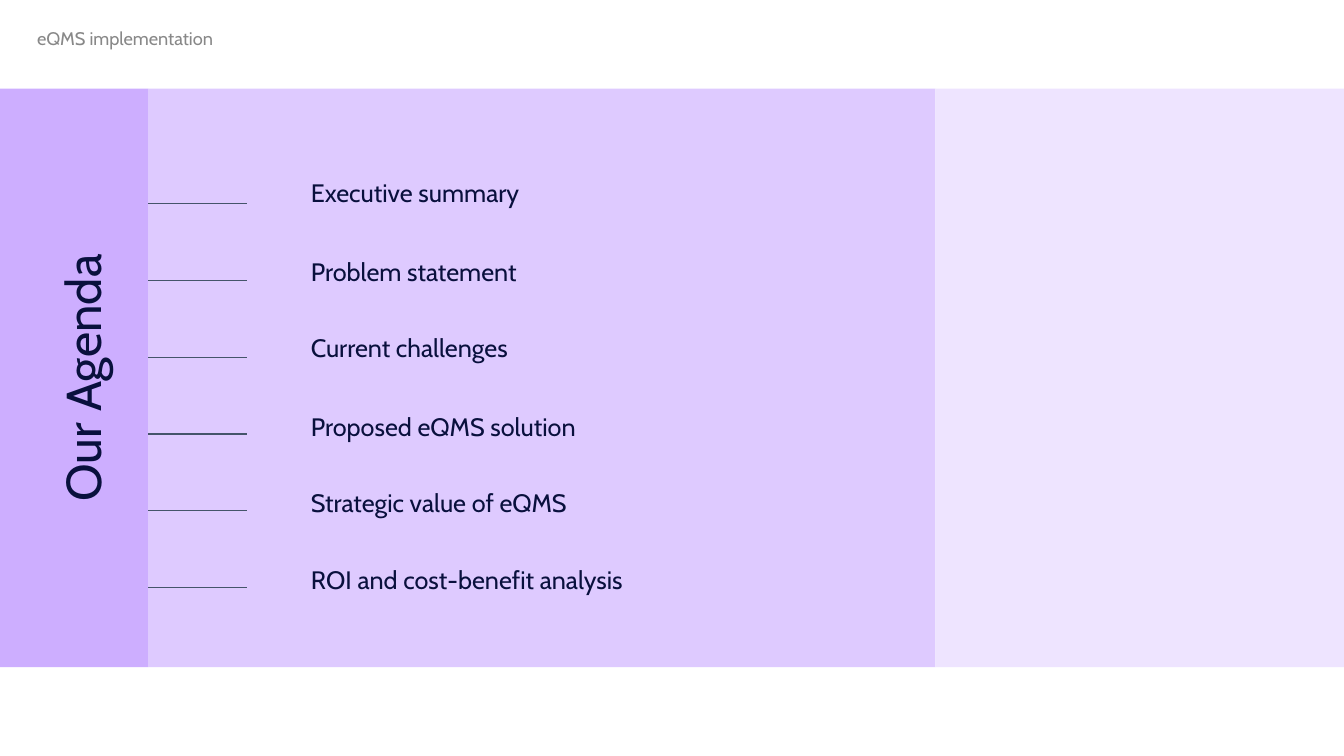
from dataclasses import dataclass
from typing import Any

from pptx import Presentation
from pptx import util as u
from pptx.dml.color import RGBColor
from pptx.enum import shapes, text
from pptx.oxml import parse_xml
from pptx.oxml.ns import nsdecls

Pt = u.Pt


@dataclass(frozen=True)
class Theme:
    font: str = "Cabin"
    ink: str = "09103D"
    muted: str = "888888"
    rule: str = "44546A"
    title_size: float = 35
    item_size: float = 18
    header_size: float = 13


@dataclass(frozen=True)
class Panel:
    left: float
    right: float
    color: str


@dataclass(frozen=True)
class AgendaItem:
    label: str
    top: float


THEME = Theme()
WIDTH, HEIGHT = 960, 540
BAND_TOP, BAND_HEIGHT = 63.36, 413.28
SIDEBAR_RIGHT, AGENDA_RIGHT = 105.84, 668.16
RULE_TOP, RULE_PITCH, RULE_LENGTH = 145.44, 54.86, 70.56
LABEL_LEFT, LABEL_WIDTH, LABEL_HEIGHT = 177.12, 452.16, 38.88
LABEL_INDENT = 36

PANELS = [
    Panel(0, SIDEBAR_RIGHT, "CDAEFF"),
    Panel(SIDEBAR_RIGHT, AGENDA_RIGHT, "DECAFF"),
    Panel(AGENDA_RIGHT, WIDTH, "EEE4FF"),
]
AGENDA = [
    AgendaItem("Executive summary", 118.08),
    AgendaItem("Problem statement", 174.24),
    AgendaItem("Current challenges", 228.96),
    AgendaItem("Proposed eQMS solution", 285.12),
    AgendaItem("Strategic value of eQMS", 339.12),
    AgendaItem("ROI and cost-benefit analysis", 394.56),
]


def write(box: Any, wording: str, *, size: float, color: str = THEME.ink,
          align: text.PP_ALIGN = text.PP_ALIGN.LEFT,
          anchor: text.MSO_ANCHOR = text.MSO_ANCHOR.TOP,
          inset: float = 7.2, indent: float = 0) -> None:
    """Fill a shape with one formatted paragraph."""
    frame = box.text_frame
    frame.word_wrap = True
    frame.auto_size = text.MSO_AUTO_SIZE.NONE
    frame.vertical_anchor = anchor
    frame.margin_left = frame.margin_right = Pt(inset)
    frame.margin_top = frame.margin_bottom = Pt(inset)
    para = frame.paragraphs[0]
    para.alignment = align
    if indent:
        properties = para._p.get_or_add_pPr()
        properties.set("marL", str(Pt(indent)))
        properties.set("indent", "0")
    span = para.add_run()
    span.text = wording
    span.font.name = THEME.font
    span.font.size = Pt(size)
    span.font.color.rgb = RGBColor.from_string(color)


def draw_panel(page: Any, panel: Panel) -> None:
    box = page.shapes.add_shape(
        shapes.MSO_SHAPE.RECTANGLE, Pt(panel.left), Pt(BAND_TOP),
        Pt(panel.right - panel.left), Pt(BAND_HEIGHT))
    box.shadow.inherit = False
    box.fill.solid()
    box.fill.fore_color.rgb = RGBColor.from_string(panel.color)
    box.line.fill.background()


def draw_title(page: Any, wording: str) -> None:
    title = page.shapes.title
    title.left, title.top = Pt(-102.96), Pt(232.56)
    title.width, title.height = Pt(337.68), Pt(74.88)
    title.rotation = 270
    write(title, wording, size=THEME.title_size,
          align=text.PP_ALIGN.CENTER, inset=9.36)
    page.shapes.element.append(title.element)  # bring in front of the panels


def draw_item(page: Any, item: AgendaItem) -> None:
    box = page.shapes.add_shape(
        shapes.MSO_SHAPE.ROUNDED_RECTANGLE, Pt(LABEL_LEFT), Pt(item.top),
        Pt(LABEL_WIDTH), Pt(LABEL_HEIGHT))
    box.shadow.inherit = False
    box.fill.background()
    box.line.fill.background()
    write(box, item.label, size=THEME.item_size,
          anchor=text.MSO_ANCHOR.MIDDLE, indent=LABEL_INDENT)


def draw_rule(page: Any, index: int) -> None:
    y = Pt(RULE_TOP + index * RULE_PITCH)
    rule = page.shapes.add_connector(
        shapes.MSO_CONNECTOR.STRAIGHT, Pt(SIDEBAR_RIGHT), y,
        Pt(SIDEBAR_RIGHT + RULE_LENGTH), y)
    rule.line.color.rgb = RGBColor.from_string(THEME.rule)
    rule.line.width = Pt(0.75)
    rule.element.spPr.append(parse_xml(f"<a:effectLst {nsdecls('a')}/>"))


def main() -> None:
    deck = Presentation()
    deck.slide_width, deck.slide_height = Pt(WIDTH), Pt(HEIGHT)
    page = deck.slides.add_slide(deck.slide_layouts.get_by_name("Title Only"))

    # Background bands and sidebar title
    for panel in PANELS:
        draw_panel(page, panel)
    draw_title(page, "Our Agenda")

    # Agenda entries with their rules
    for index, item in enumerate(AGENDA):
        draw_item(page, item)
        draw_rule(page, index)

    # Running header
    header = page.shapes.add_textbox(Pt(19.44), Pt(12.24), Pt(155.52), Pt(28.8))
    write(header, "eQMS implementation", size=THEME.header_size,
          color=THEME.muted)

    deck.save("out.pptx")


if __name__ == "__main__":
    main()
